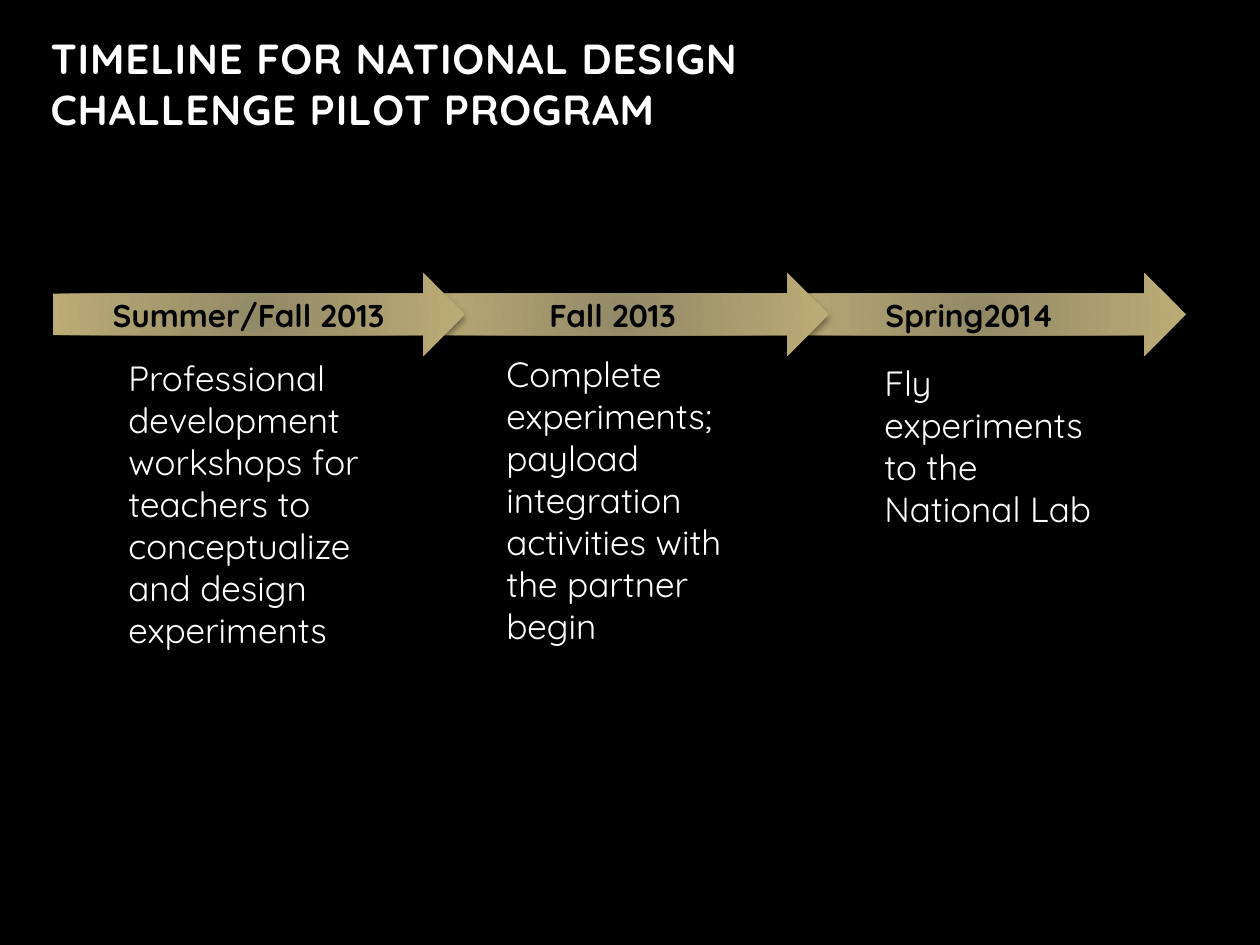
"""Build the timeline slide for the National Design Challenge pilot program."""

from dataclasses import dataclass

from lxml import etree
from pptx import Presentation
from pptx.dml.color import RGBColor
from pptx.enum.shapes import MSO_SHAPE
from pptx.enum.text import MSO_ANCHOR, MSO_AUTO_SIZE, PP_ALIGN
from pptx.oxml import parse_xml
from pptx.oxml.ns import nsdecls, qn
from pptx.util import Pt

RIGHT_ARROW = MSO_SHAPE.RIGHT_ARROW
MIDDLE, TOP = MSO_ANCHOR.MIDDLE, MSO_ANCHOR.TOP
LEFT, CENTER = PP_ALIGN.LEFT, PP_ALIGN.CENTER
GROW, FIXED = MSO_AUTO_SIZE.SHAPE_TO_FIT_TEXT, MSO_AUTO_SIZE.NONE
EMU_PER_PX = 914400 / 126
TITLE_ONLY_LAYOUT = 5
ARROW_TOP, ARROW_WIDTH, ARROW_HEIGHT = 273, 412, 83


@dataclass(frozen=True)
class Theme:
    font: str = "Quicksand"
    background: RGBColor = RGBColor(0, 0, 0)
    light: RGBColor = RGBColor(255, 255, 255)
    dark: RGBColor = RGBColor(0, 0, 0)
    gold_core: RGBColor = RGBColor(0x92, 0x89, 0x67)
    gold_edge: RGBColor = RGBColor(0xBC, 0xAC, 0x76)
    title_size: int = 24
    label_size: int = 18
    body_size: int = 20


@dataclass(frozen=True)
class Rect:
    left: int
    top: int
    width: int
    height: int

    def emu(self) -> tuple[int, ...]:
        return tuple(px(n) for n in (self.left, self.top, self.width, self.height))


@dataclass(frozen=True)
class Phase:
    label: str
    arrow_left: int
    details: str
    details_rect: Rect


THEME = Theme()
TITLE = "TIMELINE FOR NATIONAL DESIGN CHALLENGE PILOT PROGRAM"
TITLE_RECT = Rect(38, 4, 960, 158)
PHASES = (
    Phase(
        "Summer/Fall 2013", 53,
        "Professional development workshops for teachers to conceptualize "
        "and design experiments",
        Rect(116, 350, 301, 310),
    ),
    Phase(
        "Fall 2013", 417,
        "Complete experiments; payload integration activities with "
        "the partner begin",
        Rect(494, 346, 258, 310),
    ),
    Phase(
        "Spring2014", 774,
        "Fly experiments to the National Lab",
        Rect(872, 355, 243, 183),
    ),
)


def px(length: int) -> int:
    return round(length * EMU_PER_PX)


def write_text(shape, text: str, size: int, color: RGBColor, bold: bool,
               align=LEFT, anchor=TOP, fit=FIXED) -> None:
    frame = shape.text_frame
    frame.word_wrap = True
    frame.auto_size = fit
    frame.vertical_anchor = anchor
    para = frame.paragraphs[0]
    para.add_run().text = text
    para.alignment = align
    para.font.name = THEME.font
    para.font.size = Pt(size)
    para.font.bold = bold
    para.font.color.rgb = color


def fill_radial(shape) -> None:
    shape.fill.gradient()
    stops = shape.fill.gradient_stops
    for stop, position, color in zip(stops, (0, 1), (THEME.gold_core, THEME.gold_edge)):
        stop.position = position
        stop.color.rgb = color
    gradient = shape.element.spPr.find(qn("a:gradFill"))
    gradient.remove(gradient.find(qn("a:lin")))
    gradient.append(parse_xml(
        f'<a:path {nsdecls("a")} path="circle">'
        '<a:fillToRect l="100000" t="100000" r="100000" b="100000"/></a:path>'
    ))


def add_shadow(shape) -> None:
    shape.shadow.inherit = False
    effects = shape.element.spPr.find(qn("a:effectLst"))
    shadow = etree.SubElement(
        effects, qn("a:outerShdw"), blurRad=str(Pt(4)), dist=str(Pt(2)),
        dir="5400000", rotWithShape="0",
    )
    color = etree.SubElement(shadow, qn("a:srgbClr"), val=str(THEME.dark))
    etree.SubElement(color, qn("a:alpha"), val="40000")


def draw_title(slide) -> None:
    title = slide.shapes.title
    title.left, title.top, title.width, title.height = TITLE_RECT.emu()
    write_text(title, TITLE, THEME.title_size, THEME.light, True, anchor=MIDDLE)
    span = title.text_frame.paragraphs[0].runs[0]
    span.font._element.set("spc", "50")


def draw_arrow(slide, phase: Phase) -> None:
    rect = Rect(phase.arrow_left, ARROW_TOP, ARROW_WIDTH, ARROW_HEIGHT)
    arrow = slide.shapes.add_shape(RIGHT_ARROW, *rect.emu())
    fill_radial(arrow)
    arrow.line.fill.background()
    add_shadow(arrow)
    write_text(arrow, phase.label, THEME.label_size, THEME.dark, True, CENTER, MIDDLE)


def draw_details(slide, phase: Phase) -> None:
    box = slide.shapes.add_textbox(*phase.details_rect.emu())
    write_text(box, phase.details, THEME.body_size, THEME.light, False, fit=GROW)


def main() -> None:
    deck = Presentation()
    deck.slide_width, deck.slide_height = px(1260), px(945)
    slide = deck.slides.add_slide(deck.slide_layouts[TITLE_ONLY_LAYOUT])
    slide.background.fill.solid()
    slide.background.fill.fore_color.rgb = THEME.background
    draw_title(slide)
    for phase in reversed(PHASES):
        draw_arrow(slide, phase)
    for phase in PHASES:
        draw_details(slide, phase)
    deck.save("out.pptx")


if __name__ == "__main__":
    main()
